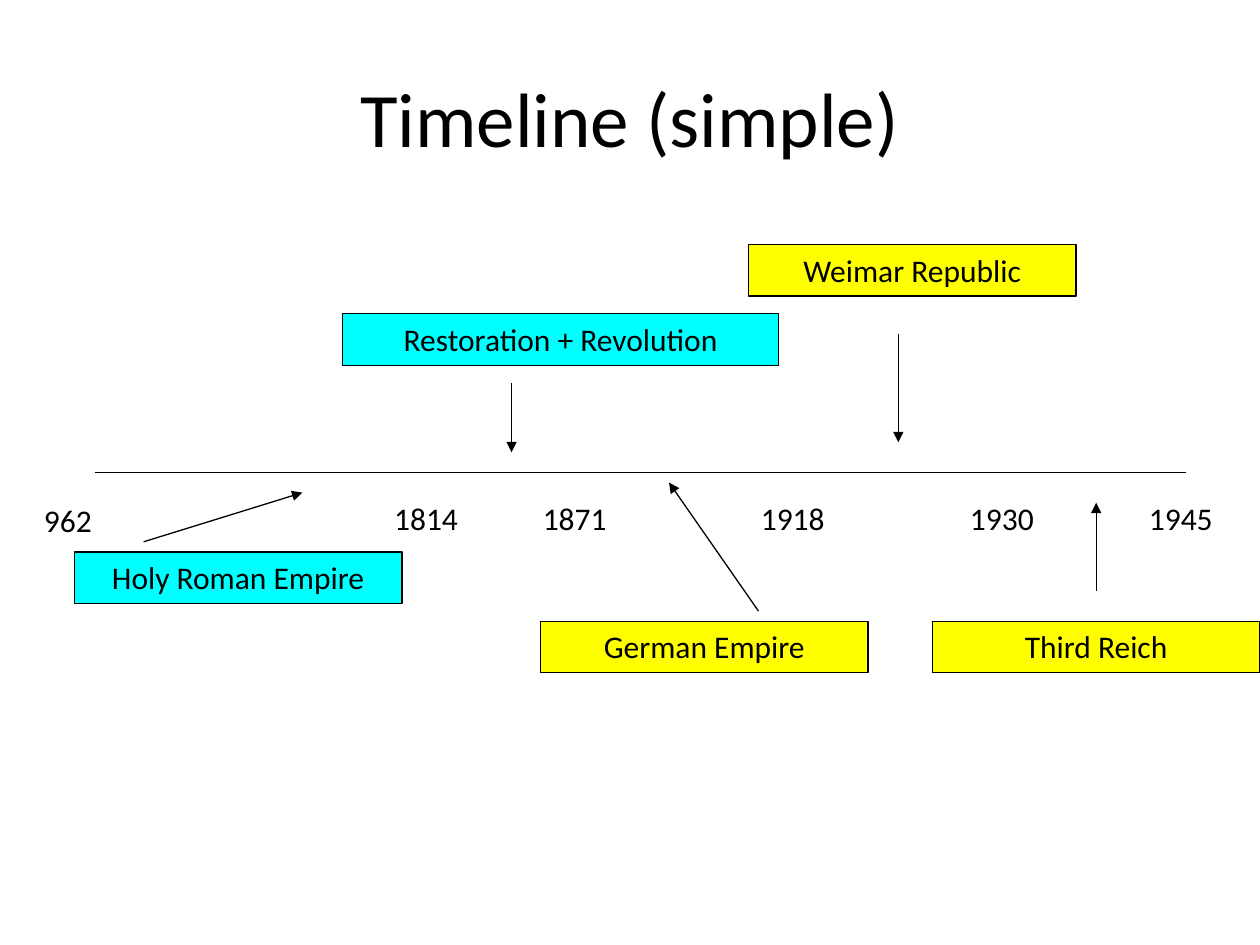
import dataclasses

import lxml.etree
import pptx
import pptx.dml.color
import pptx.enum.shapes
import pptx.enum.text
import pptx.oxml.ns
import pptx.util


@dataclasses.dataclass(frozen=True)
class Theme:
    """Colours, font and sizes used on the slide."""
    ink: str = "000000"
    early: str = "00FFFF"
    modern: str = "FFFF00"
    font: str = "Calibri"
    title_size: int = 44
    body_size: int = 18
    line_width: float = 0.75


THEME = Theme()
COLUMNS, ROWS = 100, 34
LABEL_HEIGHT = 4.1
AXIS = (7.5, 18.1, 94.1, 18.1)
YEARS = [
    ("962", 2.5, 19.9, 6.2),
    ("1814", 30.3, 19.7, 7.6),
    ("1871", 42.1, 19.7, 7.6),
    ("1918", 59.4, 19.7, 7.6),
    ("1930", 76, 19.7, 7.6),
    ("1945", 90.2, 19.7, 7.6),
]
ERAS = [
    ("Holy Roman Empire", THEME.early, (5.9, 24.4, 26), (11.4, 23.6, 24, 19.7)),
    ("Restoration + Revolution", THEME.early, (27.2, 5.5, 34.6), (40.6, 11, 40.6, 16.5)),
    ("German Empire", THEME.modern, (42.9, 29.9, 26), (60.2, 29.1, 53.1, 18.9)),
    ("Weimar Republic", THEME.modern, (59.4, 0, 26), (71.3, 7.1, 71.3, 15.7)),
    ("Third Reich", THEME.modern, (74, 29.9, 26), (87, 27.5, 87, 20.5)),
]


@dataclasses.dataclass(frozen=True)
class Box:
    """A region of the slide, in EMU."""
    left: int
    top: int
    width: int
    height: int

    def point(self, column, row):
        """Return the slide position of a grid point in this region."""
        return (int(self.left + self.width * column / COLUMNS),
                int(self.top + self.height * row / ROWS))

    def cell(self, column, row, columns, rows):
        """Return left, top, width and height of a grid area."""
        return (*self.point(column, row),
                int(self.width * columns / COLUMNS), int(self.height * rows / ROWS))


def rgb(colour):
    """Return a colour object for a hex string."""
    return pptx.dml.color.RGBColor.from_string(colour)


def write(shape, text, size, align):
    """Put one formatted paragraph into a shape."""
    shape.text_frame.text = text
    paragraph = shape.text_frame.paragraphs[0]
    paragraph.alignment = align
    font = paragraph.runs[0].font
    font.name, font.size = THEME.font, pptx.util.Pt(size)
    font.color.rgb = rgb(THEME.ink)


def outline(line):
    """Apply the common thin stroke."""
    line.color.rgb = rgb(THEME.ink)
    line.width = pptx.util.Pt(THEME.line_width)


def add_line(slide, box, ends, arrow=False):
    """Draw a straight line between two grid points, with an optional arrowhead."""
    connector = slide.shapes.add_connector(
        pptx.enum.shapes.MSO_CONNECTOR.STRAIGHT, *box.point(*ends[:2]), *box.point(*ends[2:]))
    outline(connector.line)
    qn = pptx.oxml.ns.qn
    if arrow:
        lxml.etree.SubElement(connector.line._get_or_add_ln(), qn("a:tailEnd"), type="triangle")
    lxml.etree.SubElement(connector._element.spPr, qn("a:effectLst"))


def add_year(slide, box, year, column, row, columns):
    """Place a year below the axis."""
    label = slide.shapes.add_textbox(*box.cell(column, row, columns, LABEL_HEIGHT))
    label.text_frame.word_wrap = False
    label.text_frame.auto_size = pptx.enum.text.MSO_AUTO_SIZE.SHAPE_TO_FIT_TEXT
    write(label, year, THEME.body_size, pptx.enum.text.PP_ALIGN.LEFT)


def add_era(slide, box, name, colour, place, arrow):
    """Place a coloured era label and its arrow to the axis."""
    label = slide.shapes.add_shape(
        pptx.enum.shapes.MSO_SHAPE.RECTANGLE, *box.cell(*place, LABEL_HEIGHT))
    label.shadow.inherit = False
    label.fill.solid()
    label.fill.fore_color.rgb = rgb(colour)
    outline(label.line)
    label.text_frame.word_wrap = True
    label.text_frame.vertical_anchor = pptx.enum.text.MSO_ANCHOR.TOP
    label.text_frame.auto_size = pptx.enum.text.MSO_AUTO_SIZE.SHAPE_TO_FIT_TEXT
    write(label, name, THEME.body_size, pptx.enum.text.PP_ALIGN.CENTER)
    add_line(slide, box, arrow, arrow=True)


def place_title(slide, box):
    """Position and format the title."""
    title = slide.shapes.title
    title.left, title.top, title.width, title.height = box.cell(0, 0, COLUMNS, ROWS)
    title.text_frame.vertical_anchor = pptx.enum.text.MSO_ANCHOR.MIDDLE
    write(title, "Timeline (simple)", THEME.title_size, pptx.enum.text.PP_ALIGN.CENTER)


def place_timeline(slide, box):
    """Draw the axis, its years and the eras around it."""
    add_line(slide, box, AXIS)
    for year in YEARS:
        add_year(slide, box, *year)
    for era in ERAS:
        add_era(slide, box, *era)


def main():
    """Build and save the slide."""
    deck = pptx.Presentation()
    deck.slide_width, deck.slide_height = pptx.util.Inches(10), pptx.util.Inches(7.5)
    slide = deck.slides.add_slide(deck.slide_layouts[5])
    inches = pptx.util.Inches
    place_title(slide, Box(inches(0.5), inches(0.3), inches(9), inches(1.25)))
    place_timeline(slide, Box(0, inches(1.94), deck.slide_width, inches(3.4)))
    deck.save("out.pptx")


if __name__ == "__main__":
    main()
